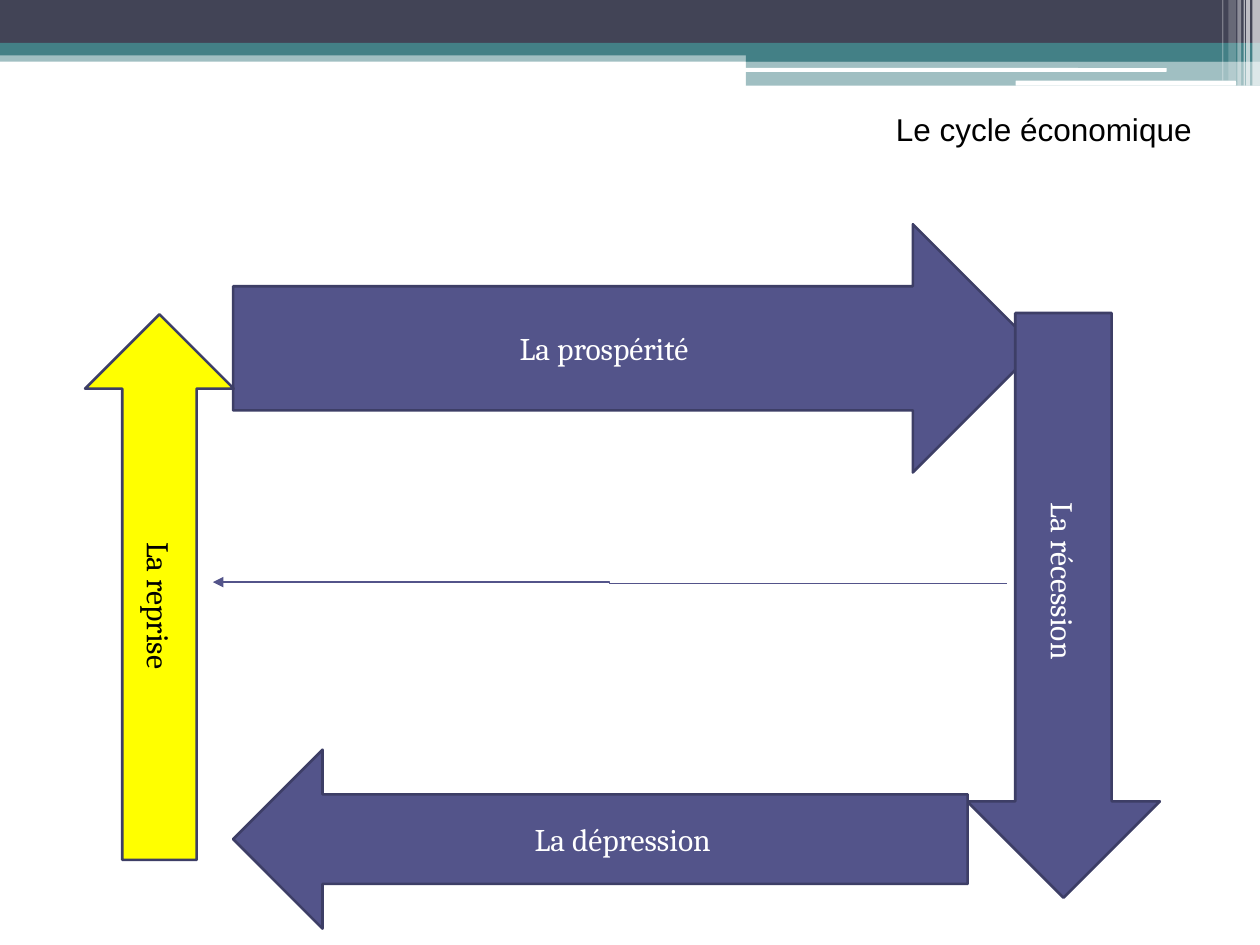
"""Builds the slide on the four phases of the economic cycle."""
from lxml import etree
from pptx import Presentation
from pptx import util as u
from pptx.dml.color import RGBColor
from pptx.enum import shapes, text
from pptx.oxml import ns

KIND = shapes.MSO_SHAPE
NAVY = RGBColor(0x42, 0x44, 0x56)
TEAL = RGBColor(0x43, 0x80, 0x86)
WHITE = RGBColor(0xFF, 0xFF, 0xFF)
BLACK = RGBColor(0, 0, 0)
PLUM = RGBColor(0x53, 0x54, 0x8A)
EDGE = RGBColor(0x3D, 0x3E, 0x66)
YELLOW = RGBColor(0xFF, 0xFF, 0)

TITLE = "Le cycle économique"
BANDS = [
    (KIND.RECTANGLE, (0, 0.4, 10, 0.09), TEAL, 50),
    (KIND.RECTANGLE, (0, 0, 10, 0.34), NAVY, 100),
    (KIND.RECTANGLE, (0, 0.34, 10, 0.1), TEAL, 100),
    (KIND.RECTANGLE, (5.92, 0.39, 4.08, 0.1), TEAL, 100),
    (KIND.RECTANGLE, (5.92, 0.48, 4.08, 0.2), TEAL, 50),
    (KIND.ROUNDED_RECTANGLE, (5.91, 0.54, 3.35, 0.03), WHITE, 100),
    (KIND.ROUNDED_RECTANGLE, (8.06, 0.64, 1.75, 0.04), WHITE, 100),
]
STRIPES = [
    (9.94, 0.06, 0.68, 65),
    (9.89, 0.03, 0.68, 65),
    (9.87, 0.01, 0.68, 60),
    (9.82, 0.03, 0.68, 40),
    (9.75, 0.06, 0.64, 20),
    (9.7, 0.01, 0.64, 30),
]
PHASES = [
    ("La prospérité", KIND.RIGHT_ARROW, (1.85, 1.78, 6.38, 1.97), 0, PLUM, WHITE),
    ("La récession", KIND.RIGHT_ARROW, (6.12, 4.04, 4.64, 1.53), 90, PLUM, WHITE),
    ("La reprise", KIND.LEFT_ARROW, (-0.9, 4.07, 4.33, 1.18), 90, YELLOW, BLACK),
    ("La dépression", KIND.LEFT_ARROW, (1.85, 5.95, 5.83, 1.42), 0, PLUM, WHITE),
]
LINK = (7.99, 4.63, 1.69, 4.62)


def inches(box):
    return [u.Inches(n) for n in box]


def style(par, face, color, align):
    par.alignment = align
    par.font.name = face
    par.font.size = u.Pt(18)
    par.font.color.rgb = color


def add_form(slide, kind, box, fill):
    form = slide.shapes.add_shape(kind, *inches(box))
    form.shadow.inherit = False
    form.fill.solid()
    form.fill.fore_color.rgb = fill
    return form


def add_band(slide, kind, box, fill, alpha):
    band = add_form(slide, kind, box, fill)
    band.line.fill.background()
    if alpha < 100:
        color = band.fill._xPr.find(".//" + ns.qn("a:srgbClr"))
        etree.SubElement(color, ns.qn("a:alpha"), val=str(alpha * 1000))


def add_phase(slide, label, kind, box, turn, fill, ink):
    arrow = add_form(slide, kind, box, fill)
    arrow.rotation = turn
    arrow.line.color.rgb = EDGE
    arrow.line.width = u.Pt(1.5)
    frame = arrow.text_frame
    frame.text = label
    frame.vertical_anchor = text.MSO_ANCHOR.MIDDLE
    style(frame.paragraphs[0], "Cambria", ink, text.PP_ALIGN.CENTER)


def add_link(slide):
    link = slide.shapes.add_connector(shapes.MSO_CONNECTOR.ELBOW, *inches(LINK))
    link.line.color.rgb = PLUM
    link.line.width = u.Pt(0.75)
    etree.SubElement(link.line._get_or_add_ln(), ns.qn("a:tailEnd"), type="triangle")
    etree.SubElement(link._element.spPr, ns.qn("a:effectLst"))


def add_title(slide):
    title = slide.shapes.title
    title.left, title.top, title.width, title.height = inches((7.01, 0.82, 2.87, 0.4))
    frame = title.text_frame
    frame.text = TITLE
    frame.word_wrap = True
    frame.vertical_anchor = text.MSO_ANCHOR.TOP
    style(frame.paragraphs[0], "Arial", BLACK, text.PP_ALIGN.LEFT)


def main():
    deck = Presentation()
    deck.slide_width, deck.slide_height = inches((10, 7.5))
    slide = deck.slides.add_slide(deck.slide_layouts.get_by_name("Title Only"))
    for band in BANDS:
        add_band(slide, *band)
    for left, width, height, alpha in STRIPES:
        add_band(slide, KIND.RECTANGLE, (left, 0, width, height), WHITE, alpha)
    for phase in PHASES:
        add_phase(slide, *phase)
    add_link(slide)
    add_title(slide)
    deck.save("out.pptx")


if __name__ == "__main__":
    main()
